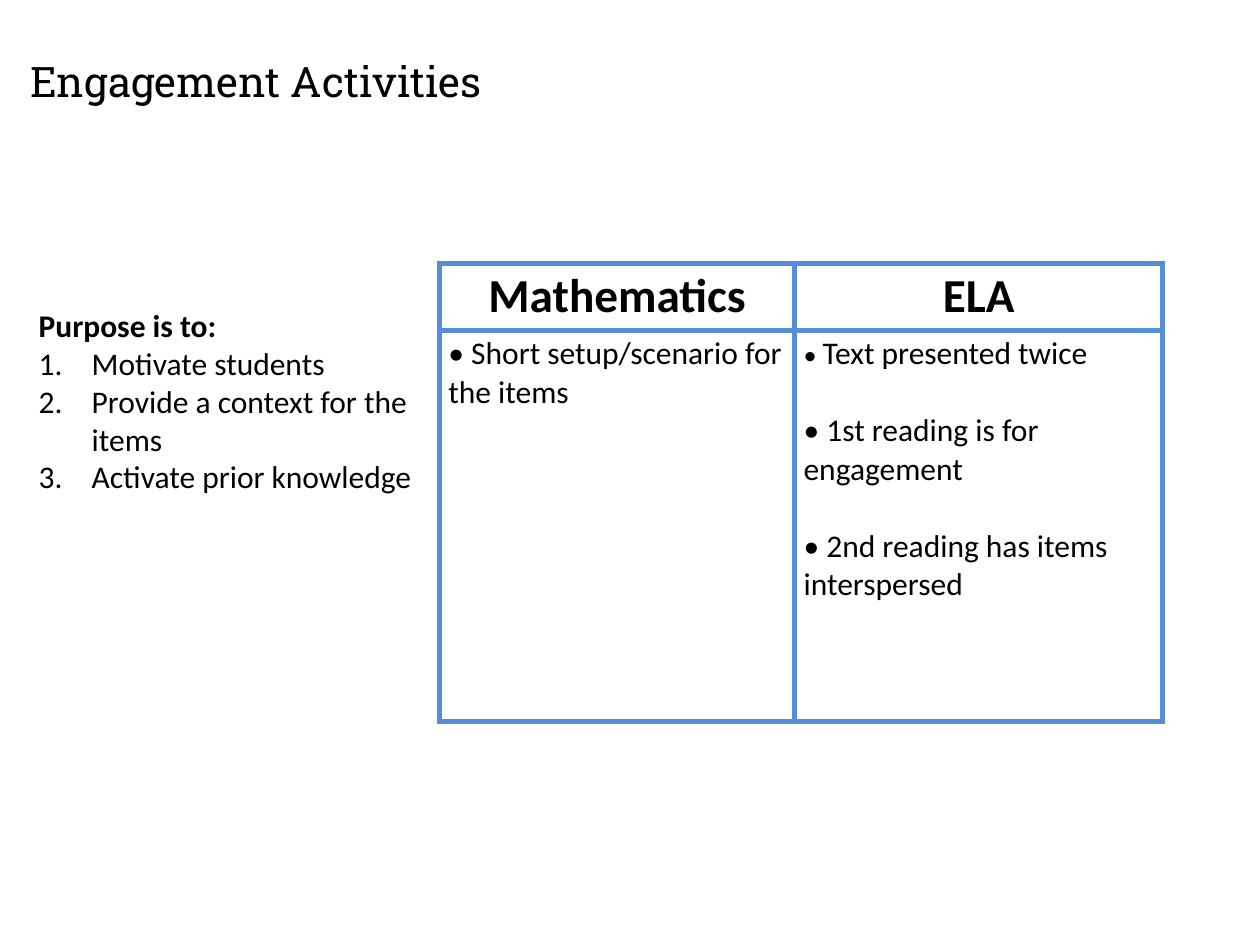
from lxml import etree
from pptx import Presentation
from pptx import util as u
from pptx.dml.color import RGBColor
from pptx.enum import text
from pptx.oxml import ns

COLORS = {"ink": "000000", "border": "558ED5"}
BODY = {"name": "Calibri", "size": u.Pt(18), "bold": False}
STRONG = {**BODY, "bold": True}
HEADER = {**STRONG, "size": u.Pt(27)}
SMALL = {**BODY, "size": u.Pt(15)}
TITLE = {**BODY, "name": "Roboto Slab", "size": u.Pt(24)}


def write(para, words, style):
    span = para.add_run()
    span.text = words
    span.font.color.rgb = RGBColor.from_string(COLORS["ink"])
    for name, value in style.items():
        setattr(span.font, name, value)


def add_child(parent, tag, **attributes):
    return etree.SubElement(parent, ns.qn(tag), **attributes)


deck = Presentation()
deck.slide_width, deck.slide_height = u.Cm(25.4), u.Cm(19.05)
page = deck.slides.add_slide(deck.slide_layouts[6])

title = page.shapes.add_textbox(u.Cm(0.61), u.Cm(0.86), u.Cm(24.16), u.Cm(1.65)).text_frame
title_format = {
    "word_wrap": True, "vertical_anchor": text.MSO_ANCHOR.MIDDLE,
    "margin_left": 0, "margin_right": 0, "margin_top": 0, "margin_bottom": 0,
}
for name, value in title_format.items():
    setattr(title, name, value)
title.paragraphs[0].line_spacing = 0.9
write(title.paragraphs[0], "Engagement Activities", TITLE)

columns = [
    ("Mathematics", u.Cm(7.16), [[("•\u00a0Short setup/scenario for the items", BODY)]]),
    ("ELA", u.Cm(7.42), [
        [("• ", SMALL), ("Text presented twice", BODY)],
        [("• 1st reading is for engagement", BODY)],
        [("• 2nd reading has items interspersed", BODY)],
    ]),
]
frame = page.shapes.add_table(2, 2, u.Cm(8.86), u.Cm(5.31), u.Cm(14.58), u.Cm(9.24))
table = frame.table
table.first_row = table.horz_banding = False
table.rows[0].height, table.rows[1].height = u.Cm(1.35), u.Cm(7.89)
cell_format = {
    "margin_left": u.Cm(0.18), "margin_right": u.Cm(0.18),
    "margin_top": u.Cm(0.09), "margin_bottom": u.Cm(0.09),
}
for index, (heading, width, points) in enumerate(columns):
    table.columns[index].width = width
    for row, lines in enumerate([[[(heading, HEADER)]], points]):
        cell = table.cell(row, index)
        for name, value in cell_format.items():
            setattr(cell, name, value)
        for number, parts in enumerate(lines):
            if number:
                para = cell.text_frame.add_paragraph()
                para.space_before = u.Pt(22)
            else:
                para = cell.text_frame.paragraphs[0]
            if row == 0:
                para.alignment = text.PP_ALIGN.CENTER
            for words, style in parts:
                write(para, words, style)
        properties = cell._tc.get_or_add_tcPr()
        for side in ("L", "R", "T", "B"):
            line = add_child(properties, f"a:ln{side}", w=str(u.Pt(3)))
            add_child(add_child(line, "a:solidFill"), "a:srgbClr", val=COLORS["border"])
        cell.fill.background()

purpose = page.shapes.add_textbox(u.Cm(0.53), u.Cm(6.05), u.Cm(8.33), u.Cm(4.11)).text_frame
purpose.word_wrap = True
purpose.auto_size = text.MSO_AUTO_SIZE.SHAPE_TO_FIT_TEXT
write(purpose.paragraphs[0], "Purpose is to:", STRONG)
for aim in ("Motivate students", "Provide a context for the items", "Activate prior knowledge"):
    para = purpose.add_paragraph()
    properties = para._p.get_or_add_pPr()
    properties.set("marL", str(u.Cm(1.07)))
    properties.set("indent", str(-u.Cm(1.07)))
    add_child(properties, "a:buFont", typeface="+mj-lt")
    add_child(properties, "a:buAutoNum", type="arabicPeriod")
    write(para, aim, BODY)

deck.save("out.pptx")
